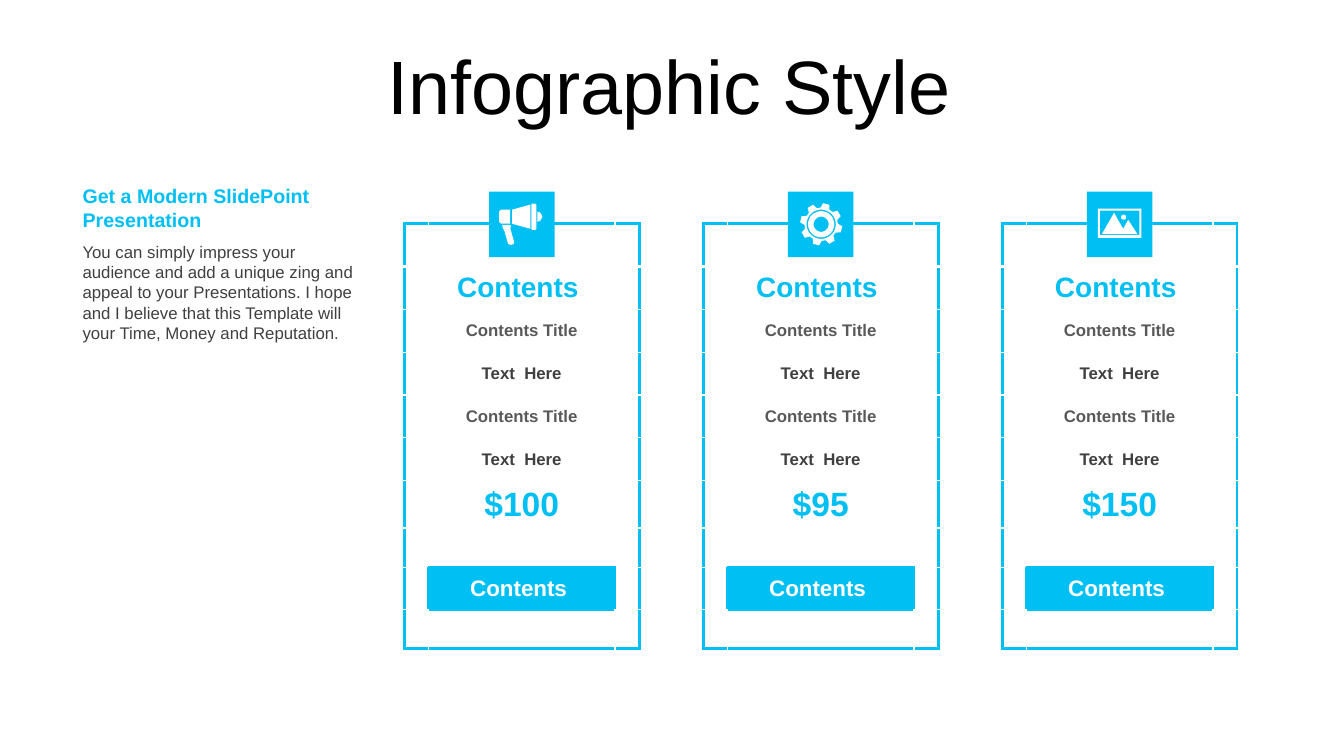
"""Builds a pricing slide with three bordered cards, icon badges and a side note."""
import math

import pptx
import pptx.dml.color
import pptx.enum.text
import pptx.oxml
import pptx.oxml.ns
import pptx.util

ACCENT, WHITE, DARK, GREY = "00BFF3", "FFFFFF", "404040", "595959"
ALIGN = pptx.enum.text.PP_ALIGN
MIDDLE = pptx.enum.text.MSO_ANCHOR.MIDDLE


def paint(target, color):
    """Give a font colour or a solid fill its hex colour."""
    target.rgb = pptx.dml.color.RGBColor.from_string(color)


def write(frame, text, size, color, bold=False, align=ALIGN.LEFT):
    """Put one formatted run into a text frame and return its paragraph."""
    paragraph = frame.paragraphs[0]
    paragraph.alignment = align
    run = paragraph.add_run()
    run.text = text
    font_format = {"name": "Arial", "size": pptx.util.Pt(size), "bold": bold}
    for attribute, value in font_format.items():
        setattr(run.font, attribute, value)
    paint(run.font.color, color)
    return paragraph


inch = pptx.util.Inches
presentation = pptx.Presentation()
presentation.slide_width, presentation.slide_height = inch(13.33), inch(7.5)
slide = presentation.slides.add_slide(presentation.slide_layouts[5])

headline = slide.shapes.title
place = {"left": 0.21, "top": 0.5, "width": 12.85, "height": 0.79}
for attribute, value in place.items():
    setattr(headline, attribute, inch(value))
headline.text_frame.auto_size = pptx.enum.text.MSO_AUTO_SIZE.NONE
headline.text_frame.vertical_anchor = MIDDLE
headline_line = write(headline.text_frame, "Infographic Style", 54, "000000", align=ALIGN.CENTER)
headline_line.line_spacing = 0.9
headline_line.space_before = pptx.util.Pt(10)

CARD_LEFT, CARD_TOP, CARD_PITCH = 4.01, 2.22, 5.93 / 2
COLUMNS = [0.24, 1.85, 0.24]
ROWS = [30.6] * 6 + [33.8, 28, 30.3, 27.9]
BADGE_TOP, BADGE_INSET, BADGE_SIZE = 1.9, 0.84, 0.65
BUTTON = (8, 1)
LAST_ROW, LAST_COLUMN = len(ROWS) - 1, len(COLUMNS) - 1
NEIGHBOURS = {"L": (0, -1), "R": (0, 1), "T": (-1, 0), "B": (1, 0)}

circle = [(math.cos(math.radians(a)), math.sin(math.radians(a))) for a in range(0, 360, 10)]
megaphone = [
    [(21, 33), (22, 35), (21, 36), (25, 50), (24.5, 52), (22, 53), (19, 52), (15, 38), (14, 37), (13, 33)],
    [(48, 20), (51, 21), (53, 25), (51, 29), (48, 30)],
    [(12, 18), (21, 18), (21, 32), (12, 32), (10, 30), (10, 20)],
    [(41, 13), (41, 37), (23, 32), (23, 18)],
    [(43, 12), (46, 12), (47, 13), (47, 37), (46, 38), (43, 38), (42, 37), (42, 13)],
]
tooth = [(-16, 16.5), (-8.5, 21), (8.5, 21), (16, 16.5)]
gear_rim = [
    (33 + radius * math.sin(math.radians(14 + 45 * step + turn)),
     32.5 - radius * math.cos(math.radians(14 + 45 * step + turn)))
    for step in range(8) for turn, radius in tooth
]
gear = [[(33 + r * x, 32.5 + r * y) for x, y in circle] for r in (7.5, 13, 14.5)] + [gear_rim]
landscape = [
    [(36.5 + 2.5 * x, 25.5 + 2.5 * y) for x, y in circle],
    [(27, 21), (36, 37), (41, 28), (50, 42), (15, 42)],
    [(13, 19), (13, 43), (52, 43), (52, 19)],
    [(11, 17), (54, 17), (54, 46), (11, 46)],
]

for position, (price, icon) in enumerate([("$100", megaphone), ("$95", gear), ("$150", landscape)]):
    card_left = CARD_LEFT + position * CARD_PITCH
    card = slide.shapes.add_table(
        len(ROWS), len(COLUMNS), inch(card_left), inch(CARD_TOP),
        inch(sum(COLUMNS)), pptx.util.Pt(sum(ROWS))).table
    card.first_row = card.horz_banding = False
    for column, width in zip(card.columns, COLUMNS):
        column.width = inch(width)
    for row, height in zip(card.rows, ROWS):
        row.height = pptx.util.Pt(height)

    lines = {
        1: ("Contents ", 20, ACCENT),
        2: ("Contents Title", 12, GREY),
        3: ("Text  Here", 12, DARK),
        4: ("Contents Title", 12, GREY),
        5: ("Text  Here", 12, DARK),
        6: (price, 24, ACCENT),
        8: ("Contents ", 16, WHITE),
    }
    for r in range(len(ROWS)):
        for c in range(len(COLUMNS)):
            cell = card.cell(r, c)
            cell.margin_top = cell.margin_bottom = 0
            cell.vertical_anchor = MIDDLE
            properties = cell._tc.get_or_add_tcPr()
            for side, (down, across) in NEIGHBOURS.items():
                beside = (r + down, c + across)
                outer = not (0 <= beside[0] <= LAST_ROW and 0 <= beside[1] <= LAST_COLUMN)
                accented = outer or BUTTON in ((r, c), beside)
                heavy = (r, side) in ((0, "B"), (1, "T"))
                weight = 2.25 if accented else 3 if heavy else 1
                properties.append(pptx.oxml.parse_xml(
                    f'<a:ln{side} {pptx.oxml.ns.nsdecls("a")} w="{int(weight * 12700)}">'
                    f'<a:solidFill><a:srgbClr val="{ACCENT if accented else WHITE}"/></a:solidFill>'
                    f'</a:ln{side}>'))
            cell.fill.solid()
            paint(cell.fill.fore_color, ACCENT if (r, c) == BUTTON else WHITE)
            if c == 1 and r in lines:
                write(cell.text_frame, *lines[r], bold=True, align=ALIGN.CENTER)

    badge_left = card_left + BADGE_INSET
    badge = slide.shapes.add_shape(
        pptx.enum.shapes.MSO_SHAPE.RECTANGLE, inch(badge_left), inch(BADGE_TOP),
        inch(BADGE_SIZE), inch(BADGE_SIZE))
    outline = slide.shapes.build_freeform(icon[0][0][0] * 10, icon[0][0][1] * 10, inch(1) / 1000)
    for contour in icon:
        points = [(x * 10, y * 10) for x, y in contour]
        if contour is not icon[0]:
            outline.move_to(*points[0])
        outline.add_line_segments(points[1:], close=True)
    symbol = outline.convert_to_shape(inch(badge_left), inch(BADGE_TOP))
    for drawn, color in ((badge, ACCENT), (symbol, WHITE)):
        drawn.shadow.inherit = False
        drawn.line.fill.background()
        drawn.fill.solid()
        paint(drawn.fill.fore_color, color)

side_note = [
    (1.78, 0.57, "Get a Modern SlidePoint Presentation", 14, ACCENT, True),
    (2.35, 1.11, "You can simply impress your audience and add a unique zing and appeal to your "
     "Presentations. I hope and I believe that this Template will your Time, Money and Reputation.",
     12, DARK, False),
]
for top, height, *wording in side_note:
    note = slide.shapes.add_textbox(inch(0.72), inch(top), inch(2.99), inch(height)).text_frame
    note.word_wrap = True
    write(note, *wording)

presentation.save("out.pptx")
